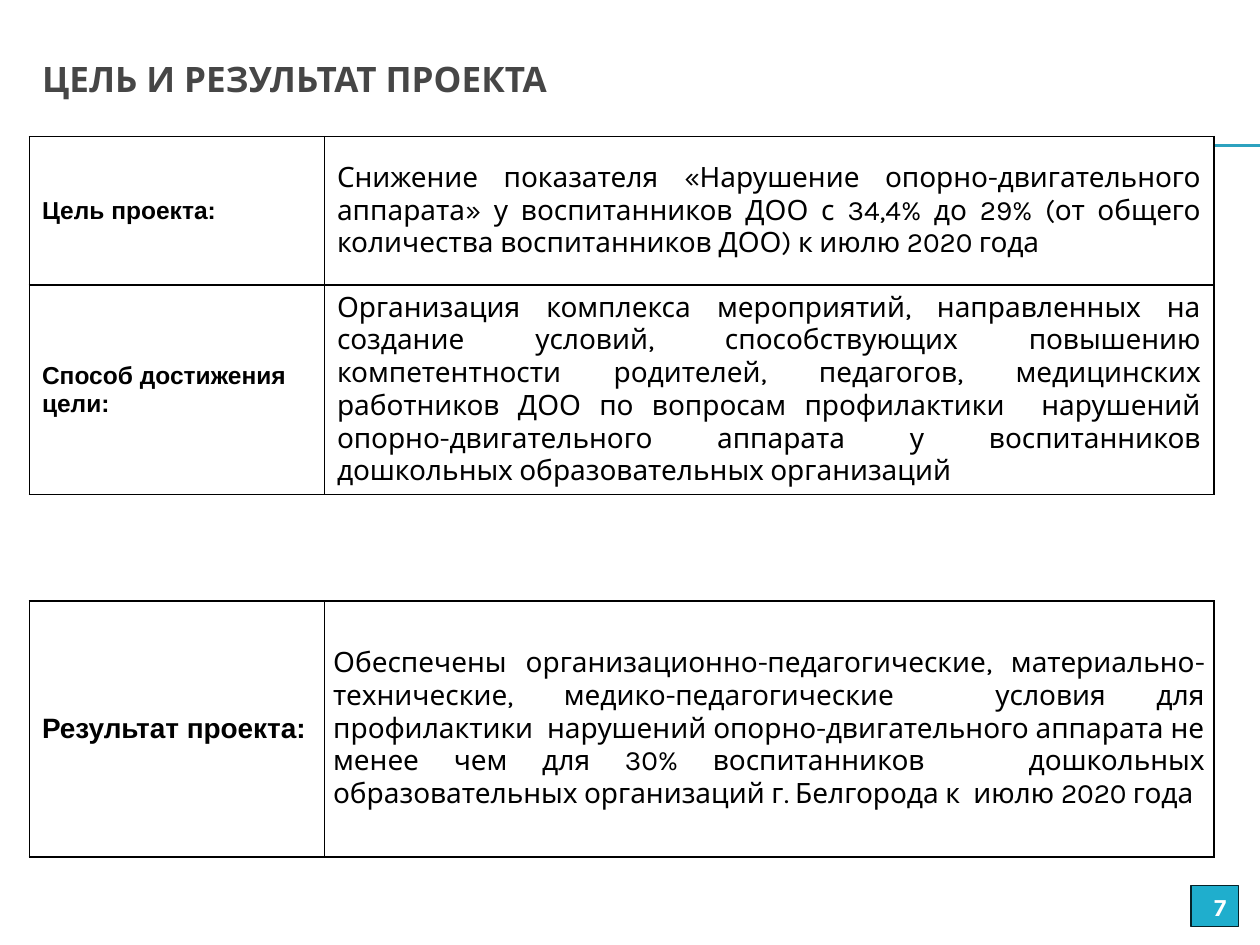
import pptx
import pptx.dml.color
import pptx.enum.shapes
import pptx.enum.text
import pptx.oxml
import pptx.oxml.ns
import pptx.util

Pt = pptx.util.Pt
ALIGN = pptx.enum.text.PP_ALIGN
MIDDLE = pptx.enum.text.MSO_ANCHOR.MIDDLE

HEADING = "ЦЕЛЬ И РЕЗУЛЬТАТ ПРОЕКТА"
PAGE_NUMBER = "7"
GOAL_ROWS = [
    ("Цель проекта:",
     "Снижение показателя «Нарушение опорно-двигательного аппарата» у воспитанников ДОО "
     "с 34,4% до 29% (от общего количества воспитанников ДОО) к июлю 2020 года"),
    ("Способ достижения цели:",
     "Организация комплекса мероприятий, направленных на создание условий, способствующих "
     "повышению компетентности родителей, педагогов, медицинских работников ДОО по вопросам "
     "профилактики  нарушений опорно-двигательного аппарата у воспитанников дошкольных "
     "образовательных организаций "),
]
RESULT_ROWS = [
    ("Результат проекта:",
     "Обеспечены организационно-педагогические, материально-технические, "
     "медико-педагогические  условия для профилактики  нарушений опорно-двигательного "
     "аппарата не менее чем для 30% воспитанников   дошкольных образовательных "
     "организаций г. Белгорода к  июлю 2020 года"),
]
WIDE_INSETS, TIGHT_INSETS = (7.2, 3.6), (5.04, 0)
# rows, top, row heights, label size, insets of the description
TABLES = [
    (GOAL_ROWS, 78, (85, 119.5), 14, WIDE_INSETS),
    (RESULT_ROWS, 343.3, (146.3,), 16, TIGHT_INSETS),
]
LEFT = 16.8
COLUMN_WIDTHS = (168.6, 508.4)


def color(hex_code):
    return pptx.dml.color.RGBColor.from_string(hex_code)


def write(frame, text, size, font, hex_code, bold=True, align=ALIGN.LEFT):
    paragraph = frame.paragraphs[0]
    paragraph.alignment = align
    run = paragraph.add_run()
    run.text = text
    formats = {"size": Pt(size), "name": font, "bold": bold}
    for key, value in formats.items():
        setattr(run.font, key, value)
    run.font.color.rgb = color(hex_code)


def set_insets(target, horizontal, vertical):
    for side, inset in {"left": horizontal, "right": horizontal,
                        "top": vertical, "bottom": vertical}.items():
        setattr(target, f"margin_{side}", Pt(inset))


def add_borders(cell):
    properties = cell._tc.get_or_add_tcPr()
    for side in "LRTB":
        properties.append(pptx.oxml.parse_xml(
            f'<a:ln{side} {pptx.oxml.ns.nsdecls("a")} w="12700"><a:solidFill>'
            f'<a:srgbClr val="000000"/></a:solidFill></a:ln{side}>'))


def add_rule(slide, y):
    rule = slide.shapes.add_connector(
        pptx.enum.shapes.MSO_CONNECTOR.STRAIGHT, Pt(40.3), Pt(y), Pt(720), Pt(y))
    rule.line.color.rgb = color("2DA2BF")
    rule.line.width = Pt(0.75)
    rule._element.spPr.append(
        pptx.oxml.parse_xml(f'<a:effectLst {pptx.oxml.ns.nsdecls("a")}/>'))


def add_project_table(slide, rows, top, heights, label_size, description_insets):
    table = slide.shapes.add_table(
        len(rows), 2, Pt(LEFT), Pt(top), Pt(sum(COLUMN_WIDTHS)), Pt(sum(heights))).table
    table.first_row = table.horz_banding = False
    for column, width in zip(table.columns, COLUMN_WIDTHS):
        column.width = Pt(width)
    for row, height, (label, description) in zip(table.rows, heights, rows):
        row.height = Pt(height)
        label_cell, description_cell = row.cells
        for cell, insets in ((label_cell, WIDE_INSETS), (description_cell, description_insets)):
            add_borders(cell)
            cell.fill.solid()
            cell.fill.fore_color.rgb = color("FFFFFF")
            cell.vertical_anchor = MIDDLE
            set_insets(cell, *insets)
        write(label_cell.text_frame, label, label_size, "Arial", "000000")
        write(description_cell.text_frame, description, 16, "Karla", "000000",
              bold=False, align=ALIGN.JUSTIFY)


def add_page_number(slide):
    badge = slide.shapes.add_shape(
        pptx.enum.shapes.MSO_SHAPE.RECTANGLE, Pt(680.6), Pt(506.2), Pt(27.2), Pt(23.4))
    badge.shadow.inherit = False
    badge.fill.solid()
    badge.fill.fore_color.rgb = color("1FAECD")
    badge.line.color.rgb = color("062329")
    badge.line.width = Pt(0.75)
    badge.text_frame.vertical_anchor = MIDDLE
    write(badge.text_frame, PAGE_NUMBER, 14, "Karla", "FFFFFF", align=ALIGN.RIGHT)


def main():
    deck = pptx.Presentation()
    deck.slide_width, deck.slide_height = Pt(720), Pt(540)
    slide = deck.slides.add_slide(deck.slide_layouts[5])

    title = slide.shapes.title
    for key, value in {"left": LEFT, "top": 11.5, "width": 684, "height": 66.2}.items():
        setattr(title, key, Pt(value))
    title.text_frame.vertical_anchor = MIDDLE
    write(title.text_frame, HEADING, 20, "Karla", "464646")

    for y in (82.8, 83.5):
        add_rule(slide, y)
    for table in TABLES:
        add_project_table(slide, *table)
    add_page_number(slide)
    deck.save("out.pptx")


if __name__ == "__main__":
    main()
